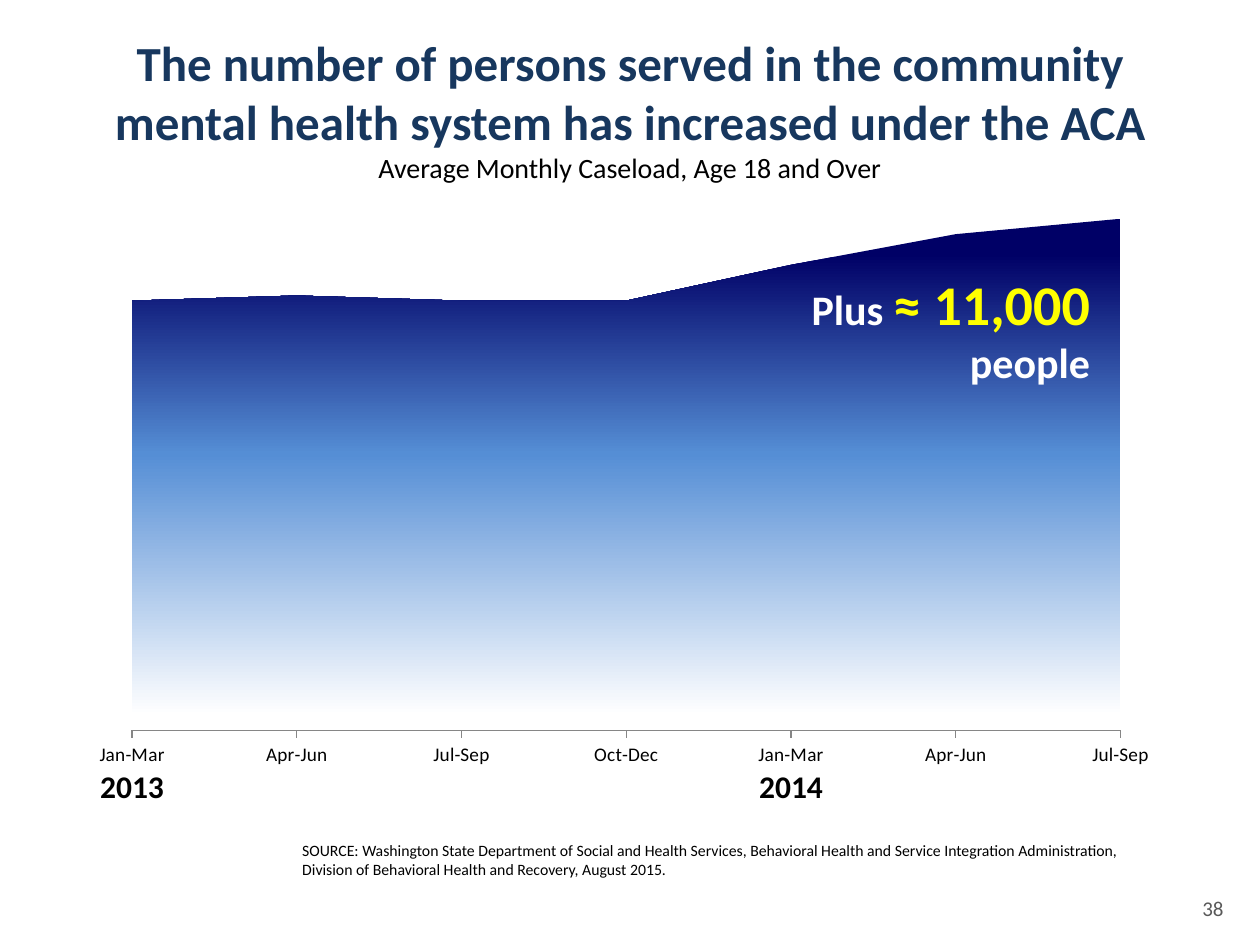
import pptx
import pptx.util
import pptx.chart.data
import pptx.dml.color
import pptx.enum.chart
import pptx.enum.text
import pptx.oxml
import pptx.oxml.ns

WIDE, HIGH = 10, 7.5
FONT = "Calibri"
HUES = {"navy": "000066", "sky": "558ED5", "white": "FFFFFF", "title": "17375E",
        "black": "000000", "grey": "595959", "tick": "868686", "gold": "FFFF00"}
ALIGN = pptx.enum.text.PP_ALIGN
Pt, qn = pptx.util.Pt, pptx.oxml.ns.qn

QUARTERS = ["Jan-Mar", "Apr-Jun", "Jul-Sep", "Oct-Dec", "Jan-Mar", "Apr-Jun", "Jul-Sep"]
SHARES = [84, 85, 84, 84, 91, 97, 100]
CASES = [58402, 59350, 58513, 58735, 63330, 67763, 69645]
MARKED = [0, 3, 6]  # quarters whose caseload is labelled
PLOT = {"x": 0.041, "y": 0.031, "w": 0.923, "h": 0.893}


def rgb(hue):
    return pptx.dml.color.RGBColor.from_string(HUES[hue])


def xml(body):
    """Parse one element, adding the namespaces to its opening tag."""
    tag = body.split(">")[0].rstrip("/")
    spaces = " " + pptx.oxml.ns.nsdecls("c", "a")
    return pptx.oxml.parse_xml(tag + spaces + body[len(tag):])


def style(font, size, hue, bold=False):
    font.name, font.size, font.bold = FONT, Pt(size), bold
    font.color.rgb = rgb(hue)


def place(shape, box):
    shape.left, shape.top, shape.width, shape.height = map(pptx.util.Inches, box)


def add_text(slide, box, text, size, hue, align=ALIGN.LEFT, bold=False, inset=True):
    shape = slide.shapes.add_textbox(0, 0, 0, 0)
    place(shape, box)
    frame = shape.text_frame
    frame.word_wrap = True
    if not inset:
        frame.margin_left = frame.margin_right = frame.margin_top = frame.margin_bottom = 0
    line = frame.paragraphs[0]
    line.text, line.alignment = text, align
    style(line.font, size, hue, bold)
    return line


def add_title(slide, box):
    title = slide.shapes.title
    place(title, box)
    frame = title.text_frame
    frame.text = ("The number of persons served in the community mental health system "
                  "has increased under the ACA\nAverage Monthly Caseload, Age 18 and Over")
    frame.auto_size = pptx.enum.text.MSO_AUTO_SIZE.NONE
    frame.vertical_anchor = pptx.enum.text.MSO_ANCHOR.TOP
    head, sub = frame.paragraphs
    head.alignment = sub.alignment = ALIGN.CENTER
    style(head.font, 28, "title", True)
    style(sub.font, 16, "black")


def split_line(area):
    """Move the second series to a line plot on hidden second axes."""
    line = xml('<c:lineChart><c:grouping val="standard"/><c:varyColors val="0"/>'
               '<c:marker val="1"/><c:axId val="901"/><c:axId val="902"/></c:lineChart>')
    line.insert(2, area.findall(qn("c:ser"))[1])
    area.addnext(line)
    axes = [("catAx", 901, 902, "b", "", ""),
            ("valAx", 902, 901, "r", '<c:max val="75000"/><c:min val="0"/>',
             '<c:crossBetween val="midCat"/>')]
    last = area.getparent().findall(qn("c:valAx"))[-1]
    for kind, own, other, side, span, end in axes:
        last.addnext(xml(
            f'<c:{kind}><c:axId val="{own}"/><c:scaling><c:orientation val="minMax"/>{span}'
            f'</c:scaling><c:delete val="1"/><c:axPos val="{side}"/>'
            f'<c:crossAx val="{other}"/><c:crosses val="autoZero"/>{end}</c:{kind}>'))
        last = last.getnext()


def set_layout(field):
    old = field.find(qn("c:layout"))
    if old is not None:
        field.remove(old)
    sizes = "".join(f'<c:{key} val="{value}"/>' for key, value in PLOT.items())
    field.insert(0, xml('<c:layout><c:manualLayout><c:layoutTarget val="inner"/>'
                        '<c:xMode val="edge"/><c:yMode val="edge"/>'
                        f'{sizes}</c:manualLayout></c:layout>'))


def add_chart(slide, box):
    data = pptx.chart.data.CategoryChartData()
    data.categories = QUARTERS
    data.add_series("Series 1", SHARES)
    data.add_series("Series 2", CASES, number_format="#,##0")
    kinds = pptx.enum.chart
    chart = slide.shapes.add_chart(kinds.XL_CHART_TYPE.AREA,
                                   *map(pptx.util.Inches, box), data).chart
    chart.has_legend = chart.has_title = False
    style(chart.font, 18, "black")

    # Axes
    cat, val = chart.category_axis, chart.value_axis
    cat.has_major_gridlines = val.has_major_gridlines = False
    cat.major_tick_mark = kinds.XL_TICK_MARK.OUTSIDE
    cat.format.line.color.rgb = rgb("tick")
    style(cat.tick_labels.font, 11, "black")
    val.minimum_scale, val.maximum_scale, val.major_unit = 0, 108, 108
    val.visible = False
    val._element.find(qn("c:crossBetween")).set("val", "midCat")

    area = chart.plots[0]._element
    split_line(area)
    set_layout(area.getparent())

    # Area with a gradient from navy to white
    stops = "".join(f'<a:gs pos="{spot}000"><a:srgbClr val="{HUES[hue]}"/></a:gs>'
                    for spot, hue in [(7, "navy"), (46, "sky"), (97, "white")])
    area.find(qn("c:ser")).get_or_add_spPr().insert(0, xml(
        f'<a:gradFill><a:gsLst>{stops}</a:gsLst><a:lin ang="5400000" scaled="0"/></a:gradFill>'))

    # Caseload line with its labels
    cases = chart.plots[1].series[0]
    cases.smooth = False
    cases.marker.style = kinds.XL_MARKER_STYLE.NONE
    cases.format.line.color.rgb = rgb("navy")
    cases.format.line.width = Pt(2.25)
    cases.data_labels.show_value = False
    for spot in MARKED:
        label = cases.points[spot].data_label
        style(label.font, 13, "black")
        label.position = kinds.XL_LABEL_POSITION.ABOVE


def add_years(slide, box):
    """Centre each year under its first quarter."""
    left, top, wide, high = box
    step = wide * PLOT["w"] / (len(QUARTERS) - 1)
    for year, spot in [("2013", 0), ("2014", 4)]:
        mid = left + wide * PLOT["x"] + spot * step
        add_text(slide, (mid - 0.35, top, 0.7, high), year, 18, "black",
                 ALIGN.CENTER, True, inset=False)


def add_callout(slide, box):
    line = add_text(slide, box, "", 24, "white", ALIGN.RIGHT, True)
    for text, size, hue in [("Plus ", 24, "white"), ("≈ 11,000 ", 32, "gold"),
                            ("people", 24, "white")]:
        run = line.add_run()
        run.text = text
        style(run.font, size, hue, True)


def main():
    deck = pptx.Presentation()
    deck.slide_width, deck.slide_height = map(pptx.util.Inches, (WIDE, HIGH))
    slide = deck.slides.add_slide(deck.slide_layouts[5])
    left, wide = 0.07 * WIDE, 0.85 * WIDE
    add_chart(slide, (left, 1.26, wide, 4.91))
    add_title(slide, (0.75, 0.21, wide, 1.31))
    add_years(slide, (left, 6.09, wide, 0.3))
    add_text(slide, (2.3, 6.62, 6.75, 0.4),
             "SOURCE: Washington State Department of Social and Health Services, "
             "Behavioral Health and Service Integration Administration, Division of "
             "Behavioral Health and Recovery, August 2015.", 9, "black")
    add_callout(slide, (5.83, 2.09, 2.92, 1.04))
    add_text(slide, (8.91, 7.06, 0.9, 0.3), "38", 12, "grey", ALIGN.RIGHT)
    deck.save("out.pptx")


if __name__ == "__main__":
    main()
